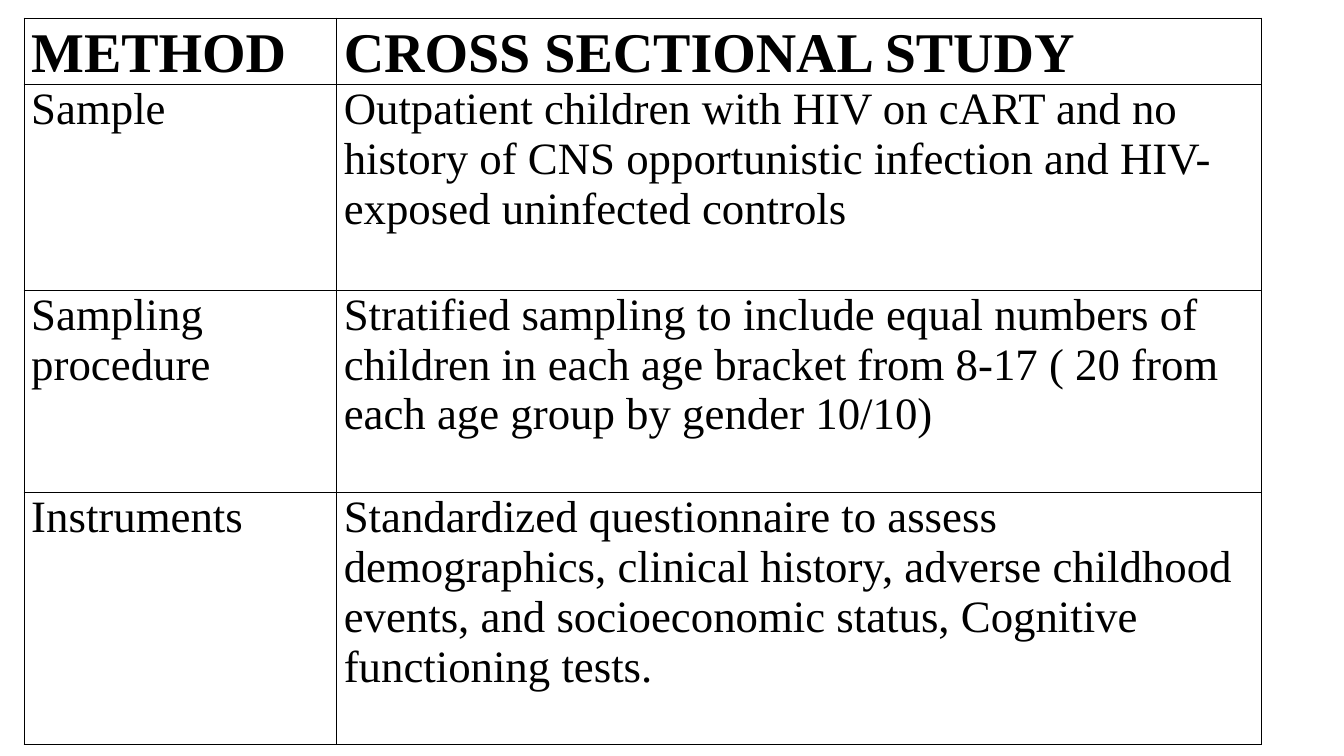
from dataclasses import dataclass

from lxml.etree import SubElement
from pptx import Presentation
from pptx.dml.color import RGBColor
from pptx.oxml.ns import qn
from pptx.table import _Cell as Cell
from pptx.util import Inches, Pt


@dataclass(frozen=True)
class Theme:
    font: str = "Times New Roman"
    ink: str = "000000"
    header_size: int = 40
    body_size: int = 32
    border: float = 1


@dataclass(frozen=True)
class MethodRow:
    label: str
    detail: str
    height: float
    header: bool = False


THEME = Theme()
COLUMN_WIDTHS = (3.1, 9.17)
ROWS = (
    MethodRow("METHOD", "CROSS SECTIONAL STUDY", 0.66, header=True),
    MethodRow(
        "Sample",
        "Outpatient children with HIV on cART and no history of CNS "
        "opportunistic infection and HIV-exposed uninfected controls",
        2.04,
    ),
    MethodRow(
        "Sampling procedure",
        "Stratified sampling to include equal numbers of children in each age "
        "bracket from 8-17 ( 20 from each age group by gender 10/10)",
        2.01,
    ),
    MethodRow(
        "Instruments",
        "Standardized questionnaire to assess demographics, clinical history, "
        "adverse childhood events, and socioeconomic status, Cognitive "
        "functioning tests.",
        2.5,
    ),
)


def set_borders(cell: Cell) -> None:
    props = cell._tc.get_or_add_tcPr()
    for side in ("a:lnL", "a:lnR", "a:lnT", "a:lnB"):
        line = SubElement(props, qn(side), w=str(Pt(THEME.border)))
        fill = SubElement(line, qn("a:solidFill"))
        SubElement(fill, qn("a:srgbClr"), val=THEME.ink)


def write_text(cell: Cell, text: str, *, size: int, bold: bool = False,
               spacing: float = 1.0) -> None:
    cell.margin_left = cell.margin_right = Inches(0.07)
    cell.margin_top = cell.margin_bottom = 0
    p = cell.text_frame.paragraphs[0]
    p.line_spacing = spacing
    r = p.add_run()
    r.text = text
    r.font.name = THEME.font
    r.font.size = Pt(size)
    r.font.bold = bold
    r.font.color.rgb = RGBColor.from_string(THEME.ink)


def main() -> None:
    prs = Presentation()
    prs.slide_width, prs.slide_height = Inches(13.33), Inches(7.5)
    s = prs.slides.add_slide(prs.slide_layouts[6])

    table = s.shapes.add_table(
        len(ROWS), len(COLUMN_WIDTHS), Inches(0.24), Inches(0.18),
        Inches(sum(COLUMN_WIDTHS)), Inches(sum(row.height for row in ROWS)),
    ).table
    table.first_row = table.horz_banding = False
    for column, width in zip(table.columns, COLUMN_WIDTHS):
        column.width = Inches(width)

    for i, row in enumerate(ROWS):
        table.rows[i].height = Inches(row.height)
        for cell, text in zip(table.rows[i].cells, (row.label, row.detail)):
            set_borders(cell)
            cell.fill.background()
            write_text(
                cell, text, bold=row.header,
                size=THEME.header_size if row.header else THEME.body_size,
                spacing=1.07 if row.header else 1.0,
            )

    prs.save("out.pptx")


if __name__ == "__main__":
    main()
